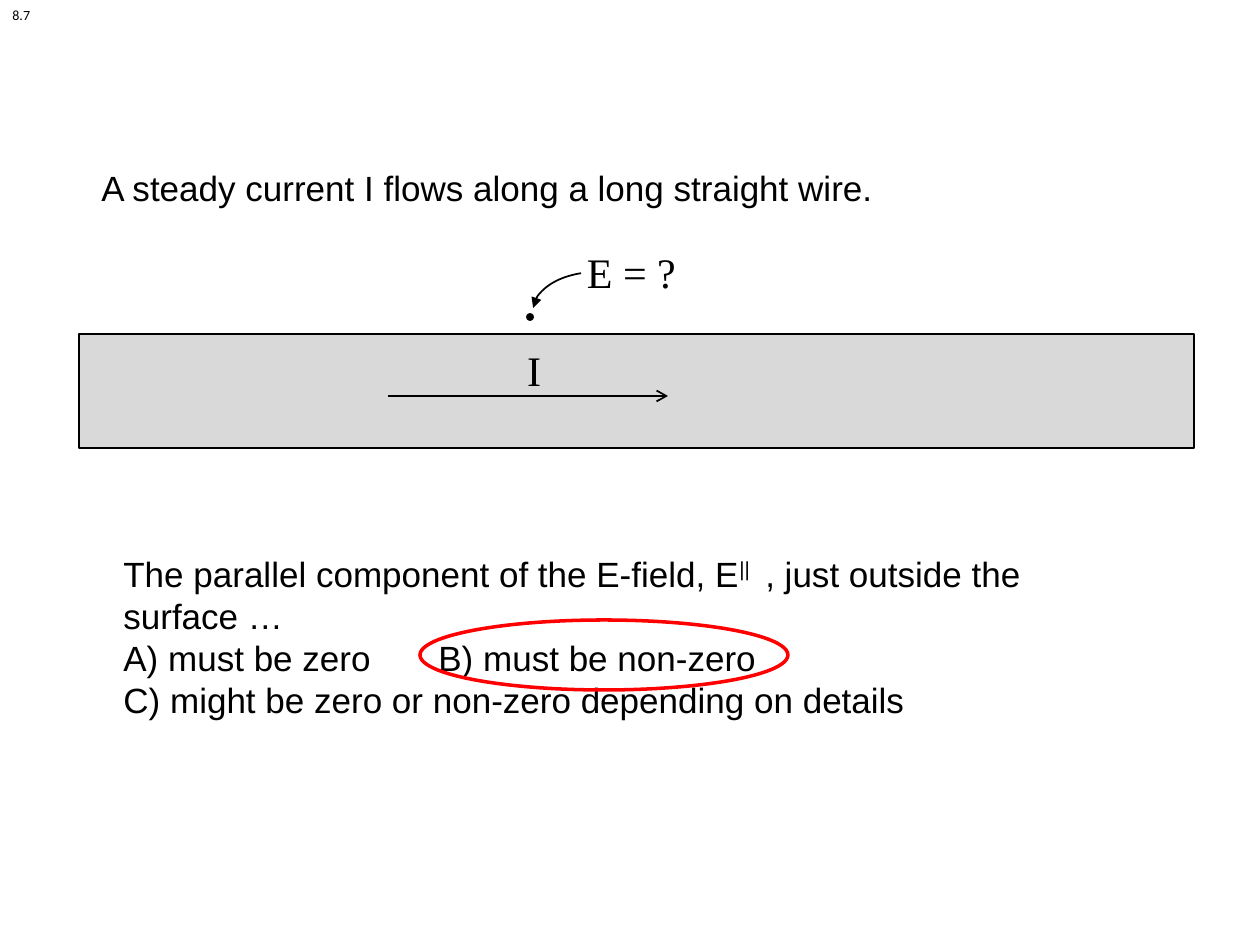
from lxml import etree
from pptx import Presentation
from pptx.dml.color import RGBColor
from pptx.enum.shapes import MSO_CONNECTOR, MSO_SHAPE
from pptx.enum.text import MSO_ANCHOR, MSO_AUTO_SIZE
from pptx.oxml.ns import qn
from pptx.util import Emu, Inches, Pt

BLACK = RGBColor(0x00, 0x00, 0x00)
GRAY = RGBColor(0xD9, 0xD9, 0xD9)
RED = RGBColor(0xFF, 0x00, 0x00)
STRAIGHT = MSO_CONNECTOR.STRAIGHT
RECTANGLE, OVAL, ARC = MSO_SHAPE.RECTANGLE, MSO_SHAPE.OVAL, MSO_SHAPE.ARC
TOP, MIDDLE = MSO_ANCHOR.TOP, MSO_ANCHOR.MIDDLE
FIT_TEXT = MSO_AUTO_SIZE.SHAPE_TO_FIT_TEXT
PX_PER_INCH = 126
BODY_FONT, LABEL_FONT, NUMBER_FONT = "Arial", "Times New Roman", "Calibri"


def px(*lengths):
    return [Emu(round(length * 914400 / PX_PER_INCH)) for length in lengths]


class SlideBuilder:
    def __init__(self, slide):
        self.slide = slide

    def shape(self, kind, box, fill=None, line=BLACK, width=1):
        shape = self.slide.shapes.add_shape(kind, *px(*box))
        shape.shadow.inherit = False
        if fill is None:
            shape.fill.background()
        else:
            shape.fill.solid()
            shape.fill.fore_color.rgb = fill
        shape.line.color.rgb = line
        shape.line.width = Pt(width)
        return shape

    def arrow(self, *ends):
        connector = self.slide.shapes.add_connector(STRAIGHT, *px(*ends))
        connector.line.color.rgb = BLACK
        connector.line.width = Pt(1)
        self.arrowhead(connector, "a:tailEnd", "arrow")
        etree.SubElement(connector._element.spPr, qn("a:effectLst"))

    def arrowhead(self, shape, end, kind):
        line = shape.line._get_or_add_ln()
        etree.SubElement(line, qn(end), type=kind)

    def text(self, box, lines, font, size, anchor=MIDDLE, wrap=True):
        """Add one paragraph per line; a line is a list of run texts."""
        frame = self.slide.shapes.add_textbox(*px(*box)).text_frame
        frame.word_wrap = wrap
        frame.vertical_anchor = anchor
        for index, runs in enumerate(lines):
            paragraph = frame.paragraphs[0] if index == 0 else frame.add_paragraph()
            paragraph.font.name = font
            paragraph.font.size = Pt(size)
            paragraph.font.color.rgb = BLACK
            for run_text in runs:
                paragraph.add_run().text = run_text
        return frame

    def label(self, box, text):
        frame = self.text(box, [[text]], LABEL_FONT, 24, TOP)
        frame.margin_left = frame.margin_right = 0
        frame.margin_top = frame.margin_bottom = 0
        frame.auto_size = FIT_TEXT
        frame.paragraphs[0].space_after = Pt(10)

    def question(self, box, lines):
        frame = self.text(box, lines, BODY_FONT, 20)
        superscript = frame.paragraphs[0].runs[1]
        superscript._r.get_or_add_rPr().set("baseline", "30000")
        for paragraph in frame.paragraphs:
            paragraph.line_spacing = Pt(24)
        # Answers hang, with tab stops every half inch
        half_inch = Inches(0.5)
        for answer in frame.paragraphs[1:]:
            properties = answer._p.get_or_add_pPr()
            properties.set("marL", str(half_inch))
            properties.set("indent", str(-half_inch))
            properties.set("defTabSz", str(half_inch))


def main():
    presentation = Presentation()
    presentation.slide_width, presentation.slide_height = Inches(10), Inches(7.5)
    builder = SlideBuilder(presentation.slides.add_slide(presentation.slide_layouts[6]))

    # Statement
    builder.text((89, 113, 995, 150),
                 [["A steady current I flows along a long straight wire."]],
                 BODY_FONT, 20)

    # Wire and current
    builder.shape(RECTANGLE, (79, 334, 1115, 114), GRAY)
    builder.arrow(388, 396, 668, 396)
    builder.label((527, 345, 82, 50), "I")

    # Field point and pointer
    builder.label((587, 247, 151, 50), "E = ?")
    builder.shape(OVAL, (527, 314, 6, 6), BLACK)
    pointer = builder.shape(ARC, (533, 272, 129, 78))
    pointer.adjustments[0] = 109.54
    pointer.adjustments[1] = 147.9
    builder.arrowhead(pointer, "a:headEnd", "triangle")

    # Question and circled answer
    builder.question((111, 503, 995, 267), [
        ["The parallel component of the E-field, E", "|| ",
         " , just outside the surface …"],
        ["A) must be zero\t\tB) must be non-zero"],
        ["C) might be zero or non-zero depending on details"],
    ])
    builder.shape(OVAL, (420, 620, 368, 70), line=RED, width=2)

    # Slide number
    number = builder.text((0, 0, 43, 30), [["8.7"]], NUMBER_FONT, 8, TOP, wrap=False)
    number.auto_size = FIT_TEXT

    presentation.save("out.pptx")


if __name__ == "__main__":
    main()
